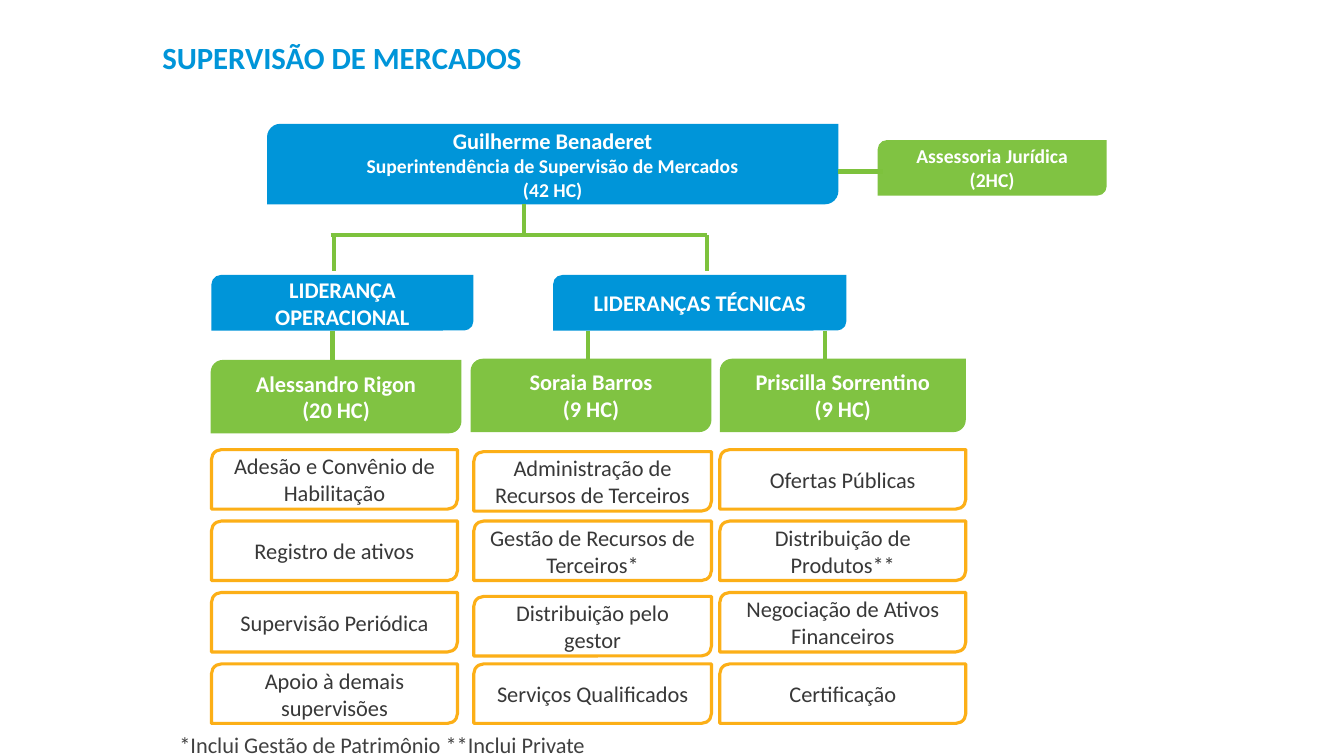
from lxml import etree
from pptx import Presentation
from pptx import util as u
from pptx.dml.color import RGBColor
from pptx.enum import shapes, text
from pptx.oxml.ns import qn

COLORS = {
    "blue": "0095D9",
    "green": "80C342",
    "link": "7DC23D",
    "orange": "FCAF17",
    "white": "FFFFFF",
    "dark": "383838",
    "note": "404040",
}
FONT = "Calibri"

# left, top, width, height in cm; fill; lines of (text, size)
HEADERS = [
    (6.73, 3.12, 14.4, 2.03, "blue", [
        ("Guilherme Benaderet", 16),
        ("Superintendência de Supervisão de Mercados", 14),
        ("(42 HC)", 14),
    ]),
    (22.12, 3.53, 5.77, 1.4, "green", [("Assessoria Jurídica", 14), ("(2HC)", 14)]),
    (5.33, 6.93, 6.6, 1.4, "blue", [("LIDERANÇA OPERACIONAL", 16)]),
    (13.94, 6.93, 7.39, 1.4, "blue", [("LIDERANÇAS TÉCNICAS", 16)]),
    (5.31, 9.07, 6.32, 1.85, "green", [("Alessandro Rigon", 16), ("(20 HC)", 16)]),
    (11.86, 9.04, 6.07, 1.85, "green", [("Soraia Barros", 16), ("(9 HC)", 16)]),
    (18.14, 9.04, 6.2, 1.85, "green", [("Priscilla Sorrentino", 16), ("(9 HC)", 16)]),
]

# left, width, vertical offset of each row, team names
TEAM_COLUMNS = [
    (5.33, 6.2, (0, 0, 0, 0), [
        "Adesão e Convênio de Habilitação",
        "Registro de ativos",
        "Supervisão Periódica",
        "Apoio à demais supervisões",
    ]),
    (11.94, 5.99, (0.05, 0, 0.1, 0), [
        "Administração de Recursos de Terceiros",
        "Gestão de Recursos de Terceiros*",
        "Distribuição pelo gestor",
        "Serviços Qualificados",
    ]),
    (18.14, 6.2, (0, 0, 0, 0), [
        "Ofertas Públicas",
        "Distribuição de Produtos**",
        "Negociação de Ativos Financeiros",
        "Certificação",
    ]),
]
TEAM_TOP, TEAM_PITCH, TEAM_HEIGHT = 11.33, 1.8, 1.5

# start x, start y, end x, end y in cm
LINKS = [
    (21.13, 4.32, 22.25, 4.32),
    (13.21, 5.13, 13.21, 5.87),
    (8.33, 5.92, 17.83, 5.92),
    (8.41, 5.92, 8.41, 6.83),
    (17.81, 5.92, 17.81, 6.83),
    (8.38, 8.33, 8.38, 9.07),
    (14.81, 8.33, 14.81, 9.07),
    (20.8, 8.33, 20.8, 9.07),
]


def rgb(name):
    return RGBColor.from_string(COLORS[name])


def write_lines(frame, lines, color, bold, align):
    """Fill a text frame with one paragraph per (text, size) pair."""
    frame.text = "\n".join(line for line, _ in lines)
    for para, (_, size) in zip(frame.paragraphs, lines):
        para.alignment = align
        for span in para.runs:
            span.font.name = FONT
            span.font.size = u.Pt(size)
            span.font.bold = bold
            span.font.color.rgb = rgb(color)


def add_box(slide, left, top, width, height, fill, lines,
            color="white", bold=True, border=None):
    box = slide.shapes.add_shape(
        shapes.MSO_SHAPE.ROUND_2_DIAG_RECTANGLE,
        u.Cm(left), u.Cm(top), u.Cm(width), u.Cm(height))
    box.shadow.inherit = False
    box.fill.solid()
    box.fill.fore_color.rgb = rgb(fill)
    if border:
        box.line.color.rgb = rgb(border)
        box.line.width = u.Pt(2.25)
    else:
        box.line.fill.background()
    box.text_frame.word_wrap = True
    box.text_frame.vertical_anchor = text.MSO_ANCHOR.MIDDLE
    write_lines(box.text_frame, lines, color, bold, text.PP_ALIGN.CENTER)


def add_label(slide, left, top, width, height, words, size, color, bold, wrap):
    label = slide.shapes.add_textbox(u.Cm(left), u.Cm(top), u.Cm(width), u.Cm(height))
    label.text_frame.word_wrap = wrap
    label.text_frame.auto_size = text.MSO_AUTO_SIZE.SHAPE_TO_FIT_TEXT
    write_lines(label.text_frame, [(words, size)], color, bold, text.PP_ALIGN.LEFT)


def add_link(slide, *ends):
    link = slide.shapes.add_connector(
        shapes.MSO_CONNECTOR.STRAIGHT, *(u.Cm(end) for end in ends))
    link.line.color.rgb = rgb("link")
    link.line.width = u.Pt(3)
    etree.SubElement(link._element.spPr, qn("a:effectLst"))


def add_teams(slide):
    for left, width, offsets, teams in TEAM_COLUMNS:
        for row, (offset, team) in enumerate(zip(offsets, teams)):
            top = TEAM_TOP + row * TEAM_PITCH + offset
            add_box(slide, left, top, width, TEAM_HEIGHT, "white", [(team, 16)],
                    color="dark", bold=False, border="orange")


def main():
    deck = Presentation()
    deck.slide_width, deck.slide_height = u.Cm(33.87), u.Cm(19.05)
    slide = deck.slides.add_slide(deck.slide_layouts[6])

    add_label(slide, 3.84, 0.84, 21.97, 1.17, "SUPERVISÃO DE MERCADOS",
              22, "blue", True, True)
    for header in HEADERS:
        add_box(slide, *header)
    add_teams(slide)
    for ends in LINKS:
        add_link(slide, *ends)
    add_label(slide, 4.27, 18.31, 11, 0.94,
              "*Inclui Gestão de Patrimônio **Inclui Private",
              16, "note", False, False)

    deck.save("out.pptx")


if __name__ == "__main__":
    main()
